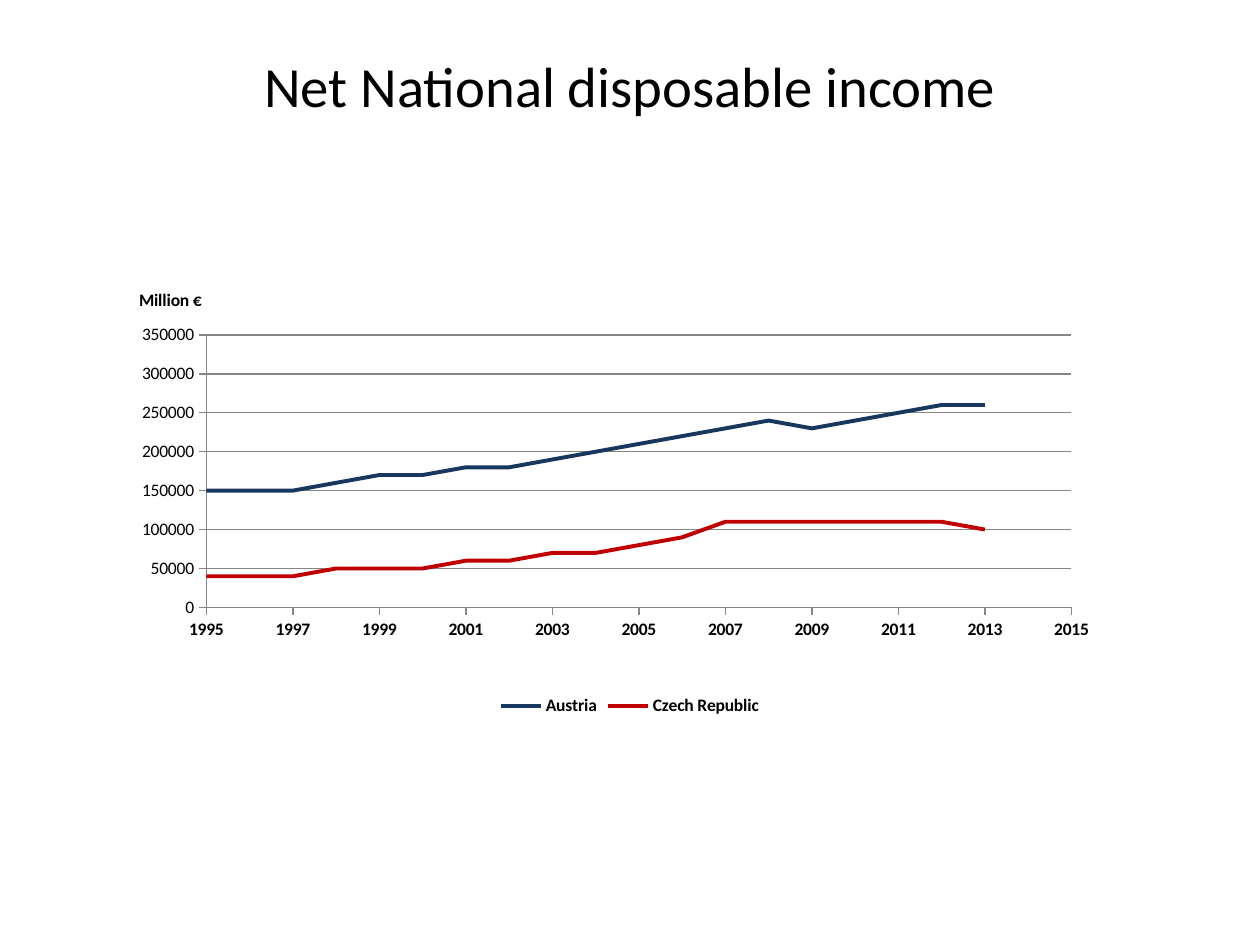
from dataclasses import dataclass

from lxml import etree
from pptx import Presentation
from pptx.chart.axis import ValueAxis
from pptx.chart.data import XyChartData
from pptx.chart.series import XySeries
from pptx.dml.color import RGBColor
from pptx.enum.chart import XL_CHART_TYPE, XL_LEGEND_POSITION, XL_TICK_MARK
from pptx.enum.text import MSO_ANCHOR, PP_ALIGN
from pptx.oxml import parse_xml
from pptx.oxml.ns import nsdecls
from pptx.util import Cm, Pt

SCATTER = XL_CHART_TYPE.XY_SCATTER_LINES_NO_MARKERS
LEGEND_BOTTOM = XL_LEGEND_POSITION.BOTTOM
TICK_OUTSIDE, TICK_NONE = XL_TICK_MARK.OUTSIDE, XL_TICK_MARK.NONE
TOP, CENTER = MSO_ANCHOR.TOP, PP_ALIGN.CENTER

FONT = "Calibri"
BLACK, GRAY, NAVY, RED = "000000", "868686", "17375E", "C00000"
GRID_WIDTH = Pt(0.8)
FIRST_YEAR = 1995


@dataclass
class Country:
    name: str
    color: str
    income: list[int]  # ten thousand million euro, one value a year


COUNTRIES = [
    Country("Austria", NAVY, [15, 15, 15, 16, 17, 17, 18, 18, 19, 20,
                              21, 22, 23, 24, 23, 24, 25, 26, 26]),
    Country("Czech Republic", RED, [4, 4, 4, 5, 5, 5, 6, 6, 7, 7,
                                    8, 9, 11, 11, 11, 11, 11, 11, 10]),
]


def rgb(color: str) -> RGBColor:
    return RGBColor.from_string(color)


def style_font(font, size: float, bold: bool = False) -> None:
    font.name, font.size, font.bold = FONT, Pt(size), bold
    font.color.rgb = rgb(BLACK)


def manual_layout(x: float, y: float, width: float = 0, height: float = 0) -> etree._Element:
    """Place a chart part by fractions of the chart area."""
    values = {"xMode": "edge", "yMode": "edge", "x": x, "y": y}
    if width:
        values = {"layoutTarget": "inner", **values, "w": width, "h": height}
    parts = "".join(f'<c:{key} val="{value}"/>' for key, value in values.items())
    return parse_xml(f'<c:layout {nsdecls("c")}><c:manualLayout>{parts}'
                     '</c:manualLayout></c:layout>')


def replace_layout(parent: etree._Element, layout: etree._Element, index: int) -> None:
    for old in parent.findall(layout.tag):
        parent.remove(old)
    parent.insert(index, layout)


def style_axis(axis: ValueAxis, low: int, high: int, step: int, bold: bool) -> None:
    axis.minimum_scale, axis.maximum_scale, axis.major_unit = low, high, step
    axis.major_tick_mark, axis.minor_tick_mark = TICK_OUTSIDE, TICK_NONE
    axis.format.line.color.rgb = rgb(GRAY)
    axis.format.line.width = GRID_WIDTH
    axis.tick_labels.number_format = "0"
    axis.tick_labels.number_format_is_linked = False
    style_font(axis.tick_labels.font, 10, bold)


def style_series(series: XySeries, color: str) -> None:
    series.format.line.color.rgb = rgb(color)
    series.format.line.width = Pt(2.25)
    smooth = series._element.get_or_add_smooth()
    smooth.val = False


def add_title(page) -> None:
    box = page.shapes.add_textbox(Cm(1.27), Cm(0.76), Cm(22.86), Cm(3.18))
    frame = box.text_frame
    frame.word_wrap, frame.vertical_anchor = True, TOP
    frame.margin_top = Cm(0.26)
    frame.text = "Net National disposable income"
    paragraph = frame.paragraphs[0]
    paragraph.alignment = CENTER
    style_font(paragraph.runs[0].font, 32.4)


def add_income_chart(page) -> None:
    data = XyChartData()
    for country in COUNTRIES:
        points = data.add_series(country.name)
        for year, income in enumerate(country.income, FIRST_YEAR):
            points.add_data_point(year, income * 10000)
    chart = page.shapes.add_chart(SCATTER, Cm(2.7), Cm(4.52), Cm(20), Cm(10.01), data).chart
    style_font(chart.font, 10)
    chart.has_title = False
    plot = chart.plots[0]
    plot.vary_by_categories = False
    for series, country in zip(plot.series, COUNTRIES):
        style_series(series, country.color)

    # Axes and gridlines
    years, amounts = chart.category_axis, chart.value_axis
    style_axis(years, FIRST_YEAR, 2015, 2, True)
    style_axis(amounts, 0, 350000, 50000, False)
    years.has_major_gridlines = False
    amounts.has_major_gridlines = True
    amounts.major_gridlines.format.line.color.rgb = rgb(GRAY)
    amounts.major_gridlines.format.line.width = GRID_WIDTH

    # Unit label above the value axis
    unit = amounts.axis_title
    unit.text_frame.text = "Million €"
    style_font(unit.text_frame.paragraphs[0].runs[0].font, 10, True)
    body = unit.text_frame._txBody.bodyPr
    body.set("rot", "0")
    body.set("vert", "horz")
    replace_layout(unit._element, manual_layout(0.002, 0.123), 1)

    # Legend and plot area
    chart.has_legend = True
    chart.legend.position = LEGEND_BOTTOM
    chart.legend.include_in_layout = False
    style_font(chart.legend.font, 10, True)
    plot_area = plot._element.getparent()
    replace_layout(plot_area, manual_layout(0.073, 0.223, 0.872, 0.549), 0)


def main() -> None:
    deck = Presentation()
    deck.slide_width, deck.slide_height = Cm(25.4), Cm(19.05)
    page = deck.slides.add_slide(deck.slide_layouts[6])
    add_title(page)
    add_income_chart(page)
    deck.save("out.pptx")


if __name__ == "__main__":
    main()
